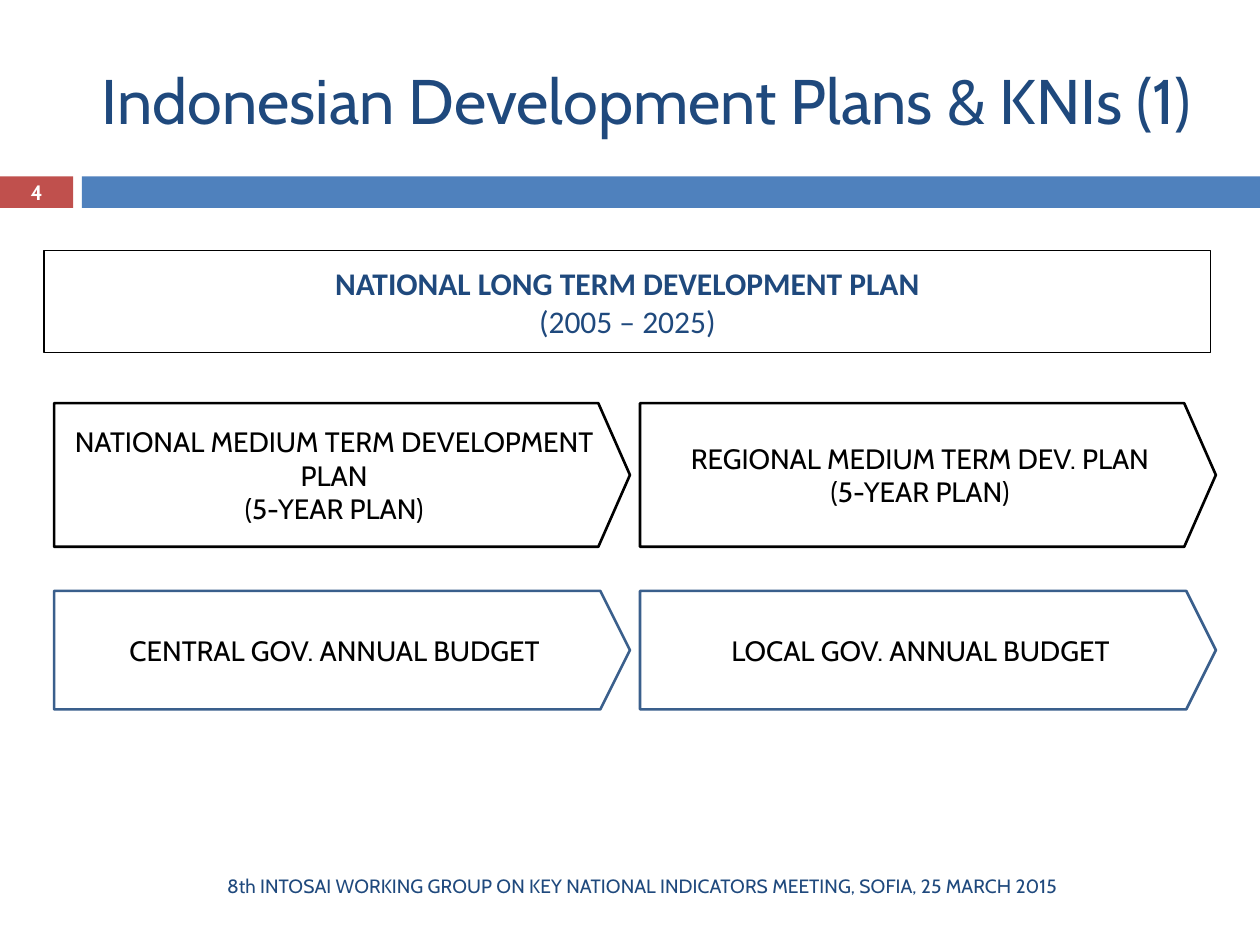
from pptx import Presentation
from pptx.dml.color import RGBColor
from pptx.enum import shapes, text
from pptx.util import Inches, Pt

# Content
TITLE = "Indonesian Development Plans & KNIs (1)"
LONG_TERM = ["NATIONAL LONG TERM DEVELOPMENT PLAN", "(2005 – 2025)"]
FOOTER = "8th INTOSAI WORKING GROUP ON KEY NATIONAL INDICATORS MEETING, SOFIA, 25 MARCH 2015"
PAGE = "4"
# Each row: top, height, point depth, line colour, one text per column
ROWS = [
    (3.2, 1.14, 0.22, "black", [
        ["NATIONAL MEDIUM TERM DEVELOPMENT PLAN", "(5-YEAR PLAN)"],
        ["REGIONAL MEDIUM TERM DEV. PLAN", "(5-YEAR PLAN)"]]),
    (4.69, 0.94, 0.25, "steel", [
        ["CENTRAL GOV. ANNUAL BUDGET"],
        ["LOCAL GOV. ANNUAL BUDGET"]]),
]
COLORS = {"black": "000000", "white": "FFFFFF", "navy": "1F497D",
          "blue": "4F81BD", "red": "C0504D", "steel": "3A5F8C"}
LEFT, PLATE_W, GAP = 0.43, 4.57, 0.08


def color(name):
    return RGBColor.from_string(COLORS[name])


def write(sp, lines, size, ink, font="Cabin", bold=False):
    tf = sp.text_frame
    tf.word_wrap = True
    tf.vertical_anchor = text.MSO_ANCHOR.MIDDLE
    tf.text = "\n".join(lines)
    for p in tf.paragraphs:
        p.alignment = text.PP_ALIGN.CENTER
        for r in p.runs:
            r.font.size, r.font.name, r.font.bold = Pt(size), font, bold
            r.font.color.rgb = color(ink)
    return tf


def shape(kind, box, fill=None, line=None, width=1.5):
    sp = s.shapes.add_shape(kind, *map(Inches, box))
    sp.shadow.inherit = False
    if fill:
        sp.fill.solid()
        sp.fill.fore_color.rgb = color(fill)
    else:
        sp.fill.background()
    if line:
        sp.line.color.rgb = color(line)
        sp.line.width = Pt(width)
    else:
        sp.line.fill.background()
    return sp


prs = Presentation()
prs.slide_width, prs.slide_height = Inches(10), Inches(7.5)
s = prs.slides.add_slide(prs.slide_layouts[5])
RECT, PLATE = shapes.MSO_SHAPE.RECTANGLE, shapes.MSO_SHAPE.PENTAGON

# Title and band, with the page number in the red part
title = s.shapes.title
title.left, title.top, title.width, title.height = map(Inches, (0.67, 0.25, 8.92, 1.08))
write(title, [TITLE], 36, "navy")
number = shape(RECT, (0, 1.4, 0.58, 0.25), fill="red")
tf = write(number, [PAGE], 11.9, "white", bold=True)
tf.margin_left = tf.margin_right = tf.margin_top = tf.margin_bottom = 0
shape(RECT, (0.65, 1.4, 9.35, 0.25), fill="blue")

# Long term plan
plan = shape(RECT, (0.35, 1.99, 9.26, 0.81), line="black", width=0.75)
tf = write(plan, LONG_TERM, 18, "navy", font="Calibri")
for p in tf.paragraphs:
    p.line_spacing = Pt(22)
tf.paragraphs[0].runs[0].font.bold = True

# Grid of plans and budgets
for top, height, depth, line, cells in ROWS:
    for col, lines in enumerate(cells):
        sp = shape(PLATE, (LEFT + col * (PLATE_W + GAP), top, PLATE_W, height), line=line)
        sp.adjustments[0] = depth
        write(sp, lines, 16, "black")

# Footer
footer = s.shapes.add_textbox(*map(Inches, (0.67, 6.83, 8.86, 0.4)))
write(footer, [FOOTER], 11, "navy")

prs.save("out.pptx")
